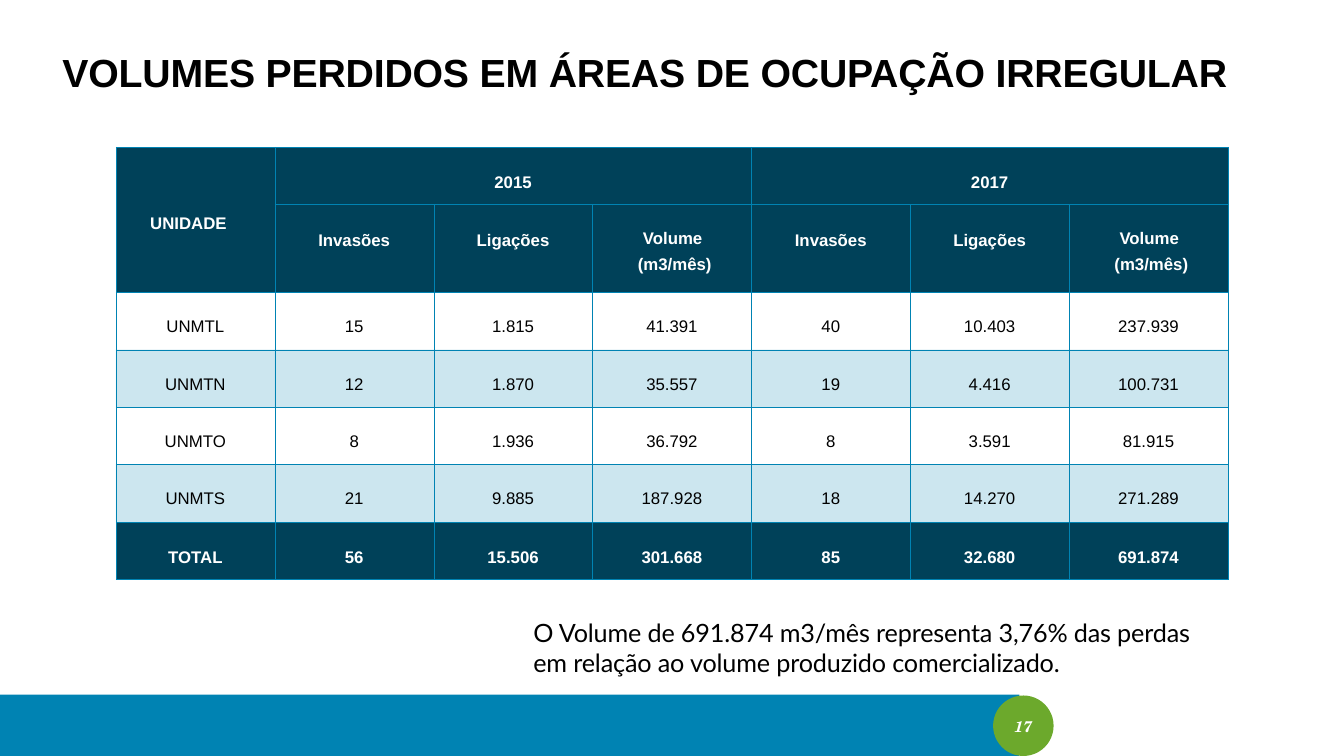
from dataclasses import dataclass
from typing import Optional

import pptx
import pptx.dml.color
import pptx.enum.shapes
import pptx.enum.text
import pptx.oxml
import pptx.oxml.ns
import pptx.util

Inches = pptx.util.Inches
Align = pptx.enum.text.PP_ALIGN
Shape = pptx.enum.shapes.MSO_SHAPE


@dataclass(frozen=True)
class Theme:
    navy: str = "004159"
    blue: str = "0083B3"
    green: str = "6CA92C"
    white: str = "FFFFFF"
    black: str = "000000"
    band_opacity: int = 20
    border_width: float = 0.25
    title_size: float = 28
    body_size: float = 18
    table_size: float = 12
    number_size: float = 11
    heading_font: str = "Arial"
    body_font: str = "Lato"
    number_font: str = "TeX Gyre Schola"


THEME = Theme()


@dataclass(frozen=True)
class Box:
    left: float
    top: float
    width: float
    height: float

    def lengths(self) -> list:
        return [Inches(value) for value in (self.left, self.top, self.width, self.height)]


@dataclass(frozen=True)
class FooterShape:
    kind: Shape
    box: Box
    color: str


@dataclass(frozen=True)
class Label:
    text: str
    box: Box
    size: float
    font: str
    color: str = THEME.black
    bold: bool = False
    italic: bool = False
    align: Align = Align.LEFT
    tracking: int = -10


@dataclass(frozen=True)
class RowStyle:
    text_top: float
    color: str = THEME.black
    bold: bool = False
    fill: Optional[str] = None
    opacity: int = 100


HEADER = RowStyle(0.26, THEME.white, True, THEME.navy)
PLAIN = RowStyle(0.25)
BANDED = RowStyle(0.25, fill=THEME.blue, opacity=THEME.band_opacity)

FOOTER = [
    FooterShape(Shape.RECTANGLE, Box(0, 6.89, 10.11, 0.61), THEME.blue),
    FooterShape(Shape.OVAL, Box(9.85, 6.9, 0.6, 0.6), THEME.green),
]
LABELS = [
    Label("17", Box(10.03, 7.11, 0.24, 0.2), THEME.number_size, THEME.number_font,
          THEME.white, True, True, Align.CENTER, 0),
    Label("VOLUMES PERDIDOS EM ÁREAS DE OCUPAÇÃO IRREGULAR", Box(0.62, 0.48, 11.63, 0.49),
          THEME.title_size, THEME.heading_font, bold=True),
    Label("O Volume de 691.874 m3/mês representa 3,76% das perdas em relação ao volume "
          "produzido comercializado.", Box(5.29, 6.12, 6.66, 0.63),
          THEME.body_size, THEME.body_font),
]

TABLE_BOX = Box(1.15, 1.46, 11.03, 4.29)
ROW_HEIGHT = 0.57
SUBHEADER_HEIGHT = 0.87
YEARS = ["2015", "2017"]
MEASURES = ["Invasões", "Ligações", "Volume (m3/mês)"]
UNITS = [
    ["UNMTL", "15", "1.815", "41.391", "40", "10.403", "237.939"],
    ["UNMTN", "12", "1.870", "35.557", "19", "4.416", "100.731"],
    ["UNMTO", "8", "1.936", "36.792", "8", "3.591", "81.915"],
    ["UNMTS", "21", "9.885", "187.928", "18", "14.270", "271.289"],
]
TOTAL = ["TOTAL", "56", "15.506", "301.668", "85", "32.680", "691.874"]


def rgb(color: str) -> pptx.dml.color.RGBColor:
    return pptx.dml.color.RGBColor.from_string(color)


def write_text(frame, text: str, *, size: float, font: str, color: str, bold: bool = False,
               italic: bool = False, align: Align = Align.LEFT, tracking: int = 0,
               indent: float = 0, first_line: float = 0, line_spacing: float = 1) -> None:
    frame.word_wrap = True
    paragraph = frame.paragraphs[0]
    paragraph.alignment = align
    paragraph.line_spacing = line_spacing
    properties = paragraph._p.get_or_add_pPr()
    properties.set("marL", str(Inches(indent)))
    properties.set("indent", str(Inches(first_line)))
    run = paragraph.add_run()
    run.text = text
    run.font.size = pptx.util.Pt(size)
    run.font.name = font
    run.font.bold = bold
    run.font.italic = italic
    run.font.color.rgb = rgb(color)
    run._r.get_or_add_rPr().set("spc", str(tracking))


def draw_footer_shape(slide, item: FooterShape) -> None:
    shape = slide.shapes.add_shape(item.kind, *item.box.lengths())
    shape.shadow.inherit = False
    shape.fill.solid()
    shape.fill.fore_color.rgb = rgb(item.color)
    shape.line.fill.background()


def draw_label(slide, label: Label) -> None:
    frame = slide.shapes.add_textbox(*label.box.lengths()).text_frame
    frame.margin_left = frame.margin_top = frame.margin_right = frame.margin_bottom = 0
    write_text(frame, label.text, size=label.size, font=label.font, color=label.color,
               bold=label.bold, italic=label.italic, align=label.align, tracking=label.tracking)


def style_cell(cell, style: RowStyle) -> None:
    cell.margin_left = cell.margin_right = cell.margin_bottom = 0
    cell.margin_top = Inches(style.text_top)
    properties = cell._tc.get_or_add_tcPr()
    for side in ("lnL", "lnR", "lnT", "lnB"):
        properties.append(pptx.oxml.parse_xml(
            f'<a:{side} {pptx.oxml.ns.nsdecls("a")} w="{pptx.util.Pt(THEME.border_width)}">'
            f'<a:solidFill><a:srgbClr val="{THEME.blue}"/></a:solidFill></a:{side}>'))
    if style.fill is None:
        cell.fill.background()
        return
    cell.fill.solid()
    cell.fill.fore_color.rgb = rgb(style.fill)
    if style.opacity < 100:
        color = properties.find(pptx.oxml.ns.qn("a:solidFill"))[0]
        color.append(pptx.oxml.parse_xml(
            f'<a:alpha {pptx.oxml.ns.nsdecls("a")} val="{style.opacity * 1000}"/>'))


def write_cell(cell, text: str, style: RowStyle) -> None:
    layout = {"align": Align.CENTER}
    if text == MEASURES[-1]:
        layout = {"indent": 0.45, "first_line": 0.05, "line_spacing": 1.43}
        cell.margin_top = Inches(0.16)
    elif text == "UNIDADE":
        layout = {"indent": 0.34}
        cell.margin_top = Inches(0.67)
    write_text(cell.text_frame, text, size=THEME.table_size, font=THEME.heading_font,
               color=style.color, bold=style.bold, **layout)


def draw_table(slide) -> None:
    span = len(MEASURES)
    year_row = ["UNIDADE"] + [text for year in YEARS for text in [year] + [""] * (span - 1)]
    rows = [year_row, [""] + MEASURES * len(YEARS), *UNITS, TOTAL]
    styles = [HEADER, HEADER] + [PLAIN, BANDED] * (len(UNITS) // 2) + [HEADER]
    count = len(year_row)
    table = slide.shapes.add_table(len(rows), count, *TABLE_BOX.lengths()).table
    table.first_row = table.horz_banding = False
    for column in table.columns:
        column.width = Inches(TABLE_BOX.width / count)
    for index, (texts, style) in enumerate(zip(rows, styles)):
        table.rows[index].height = Inches(SUBHEADER_HEIGHT if index == 1 else ROW_HEIGHT)
        for position, text in enumerate(texts):
            cell = table.cell(index, position)
            style_cell(cell, style)
            if text:
                write_cell(cell, text, style)
    table.cell(0, 0).merge(table.cell(1, 0))
    for first in range(1, count, span):
        table.cell(0, first).merge(table.cell(0, first + span - 1))


def main() -> None:
    presentation = pptx.Presentation()
    presentation.slide_width = Inches(13.33)
    presentation.slide_height = Inches(7.5)
    slide = presentation.slides.add_slide(presentation.slide_layouts[6])
    for item in FOOTER:
        draw_footer_shape(slide, item)
    draw_table(slide)
    for label in LABELS:
        draw_label(slide, label)
    presentation.save("out.pptx")


if __name__ == "__main__":
    main()
